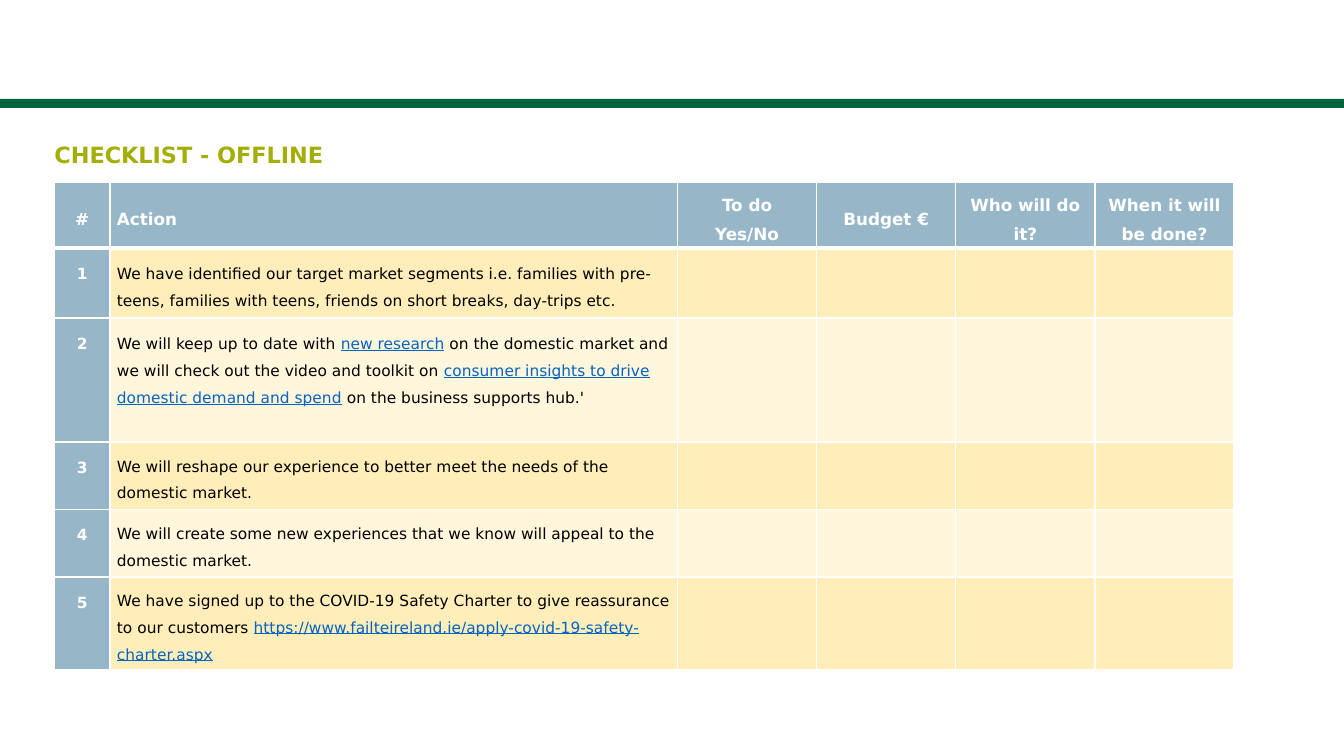
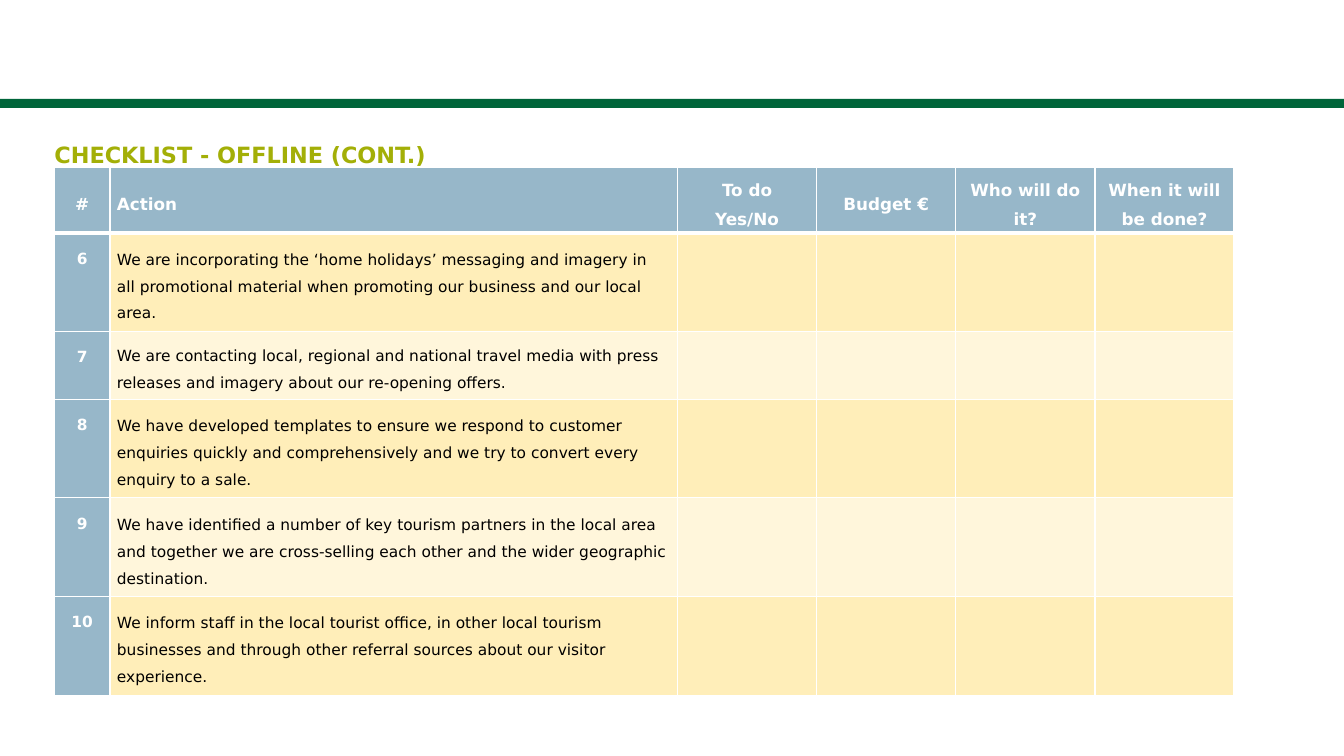
from dataclasses import dataclass

from lxml.etree import SubElement
from pptx import Presentation
from pptx.dml.color import RGBColor
from pptx.enum.shapes import MSO_SHAPE
from pptx.enum.text import MSO_ANCHOR, PP_ALIGN
from pptx.oxml.ns import qn
from pptx.util import Inches, Pt

FONT = "DejaVu Sans"
WHITE, BLACK = "FFFFFF", "000000"
GREEN, LIME = "00653A", "A3AF07"
BLUE, CREAM, LINK = "317195", "FFEEB9", "0563C1"

LEFT = 0.54
COLUMN_WIDTHS = [0.55, 5.63] + [1.38] * 4
HEADER_HEIGHT = 0.65
HEADINGS = ["#", "Action", "To do\nYes/No", "Budget €", "Who will do it?", "When it will be done?"]

TITLE_STYLE = {"size": Pt(16), "bold": True}
HEADING_STYLE = {"size": Pt(12), "bold": True}
NUMBER_STYLE = {"size": Pt(11), "bold": True}
ACTION_STYLE = {"size": Pt(11), "bold": False}
LINK_STYLE = {**ACTION_STYLE, "underline": True}


@dataclass
class Span:
    text: str
    color: str
    style: dict


@dataclass
class Action:
    height: float
    spans: list[Span]
    anchor: MSO_ANCHOR = MSO_ANCHOR.MIDDLE
    padding: float = 0


@dataclass
class Checklist:
    title: str
    top: float
    first_number: int
    actions: list[Action]


def plain(text: str) -> Span:
    return Span(text, BLACK, ACTION_STYLE)


def link(text: str) -> Span:
    return Span(text, LINK, LINK_STYLE)


CHECKLISTS = [
    Checklist("CHECKLIST - OFFLINE", 1.81, 1, [
        Action(0.67, [plain(
            "We have identified our target market segments i.e. families with pre-teens, "
            "families with teens, friends on short breaks, day-trips etc.")], padding=0.08),
        Action(1.23, [
            plain("We will keep up to date with "),
            link("new research"),
            plain(" on the domestic market and we will check out the video and toolkit on "),
            link("consumer insights to drive domestic demand and spend"),
            plain(" on the business supports hub.'"),
        ], MSO_ANCHOR.TOP, 0.08),
        Action(0.67, [plain(
            "We will reshape our experience to better meet the needs of the domestic market.")]),
        Action(0.67, [plain(
            "We will create some new experiences that we know will appeal to the domestic market.")]),
        Action(0.92, [
            plain("We have signed up to the COVID-19 Safety Charter to give reassurance "
                  "to our customers "),
            link("https://www.failteireland.ie/apply-covid-19-safety-charter.aspx"),
        ]),
    ]),
    Checklist("CHECKLIST - OFFLINE (CONT.)", 1.66, 6, [
        Action(0.98, [plain(
            "We are incorporating the ‘home holidays’ messaging and imagery in all "
            "promotional material when promoting our business and our local area.")]),
        Action(0.67, [plain(
            "We are contacting local, regional and national travel media with press releases "
            "and imagery about our re-opening offers.")]),
        Action(0.98, [plain(
            "We have developed templates to ensure we respond to customer enquiries quickly and "
            "comprehensively and we try to convert every enquiry to a sale.")]),
        Action(0.98, [plain(
            "We have identified a number of key tourism partners in the local area and together "
            "we are cross-selling each other and the wider geographic destination.")]),
        Action(0.98, [plain(
            "We inform staff in the local tourist office, in other local tourism businesses and "
            "through other referral sources about our visitor experience.")]),
    ]),
]


def rgb(color: str) -> RGBColor:
    return RGBColor.from_string(color)


def write(frame, spans: list[Span], line_spacing: float, align=PP_ALIGN.LEFT) -> None:
    frame.word_wrap = True
    para = frame.paragraphs[0]
    para.alignment = align
    para.line_spacing = line_spacing
    for span in spans:
        for index, line in enumerate(span.text.split("\n")):
            if index:
                para.add_line_break()
            run = para.add_run()
            run.text = line
            run.font.name = FONT
            run.font.color.rgb = rgb(span.color)
            for name, value in span.style.items():
                setattr(run.font, name, value)


def paint_cell(cell, color: str, opacity: int, top: int = 1, bottom: int = 1) -> None:
    properties = cell._tc.get_or_add_tcPr()
    for side, width in {"L": 1, "R": 1, "T": top, "B": bottom}.items():
        border = SubElement(properties, qn(f"a:ln{side}"), w=str(Pt(width)))
        fill = SubElement(border, qn("a:solidFill"))
        SubElement(fill, qn("a:srgbClr"), val=WHITE)
    cell.fill.solid()
    cell.fill.fore_color.rgb = rgb(color)
    if opacity < 100:
        shade = properties.find(qn("a:solidFill"))[0]
        SubElement(shade, qn("a:alpha"), val=str(opacity * 1000))


def fill_cell(cell, spans: list[Span], align, anchor, padding: float) -> None:
    margins = {"left": 0.07, "top": padding, "right": 0.07, "bottom": padding}
    for side, value in margins.items():
        setattr(cell, f"margin_{side}", Inches(value))
    cell.vertical_anchor = anchor
    write(cell.text_frame, spans, 1.5, align)


def add_band(page, width: int) -> None:
    band = page.shapes.add_shape(MSO_SHAPE.RECTANGLE, 0, Inches(0.98), width, Inches(0.09))
    band.shadow.inherit = False
    band.fill.solid()
    band.fill.fore_color.rgb = rgb(GREEN)
    band.line.fill.background()


def add_title(page, title: str) -> None:
    box = page.shapes.add_textbox(Inches(LEFT), Inches(1.38), Inches(10.05), Inches(0.58))
    for side in ("left", "top", "right", "bottom"):
        setattr(box.text_frame, f"margin_{side}", 0)
    write(box.text_frame, [Span(title, LIME, TITLE_STYLE)], 1.07)


def add_checklist(page, checklist: Checklist) -> None:
    heights = [HEADER_HEIGHT] + [action.height for action in checklist.actions]
    table = page.shapes.add_table(
        len(heights), len(COLUMN_WIDTHS), Inches(LEFT), Inches(checklist.top),
        Inches(sum(COLUMN_WIDTHS)), Inches(sum(heights))).table
    table.first_row = table.horz_banding = False
    for column, width in zip(table.columns, COLUMN_WIDTHS):
        column.width = Inches(width)
    for row, height in zip(table.rows, heights):
        row.height = Inches(height)

    for index, heading in enumerate(HEADINGS):
        cell = table.cell(0, index)
        align = PP_ALIGN.LEFT if heading == "Action" else PP_ALIGN.CENTER
        paint_cell(cell, BLUE, 50, bottom=3)
        fill_cell(cell, [Span(heading, WHITE, HEADING_STYLE)], align, MSO_ANCHOR.MIDDLE, 0)

    for row, action in enumerate(checklist.actions, 1):
        top = 3 if row == 1 else 1
        for column in range(len(HEADINGS)):
            color, opacity = (CREAM, 100 if row % 2 else 50) if column else (BLUE, 50)
            paint_cell(table.cell(row, column), color, opacity, top=top)
        number = Span(str(checklist.first_number + row - 1), WHITE, NUMBER_STYLE)
        fill_cell(table.cell(row, 0), [number], PP_ALIGN.CENTER, MSO_ANCHOR.TOP, 0.08)
        fill_cell(table.cell(row, 1), action.spans, PP_ALIGN.LEFT, action.anchor, action.padding)


def main() -> None:
    deck = Presentation()
    deck.slide_width = Inches(13.33)
    deck.slide_height = Inches(7.5)
    for checklist in CHECKLISTS:
        page = deck.slides.add_slide(deck.slide_layouts[6])
        add_band(page, deck.slide_width)
        add_checklist(page, checklist)
        add_title(page, checklist.title)
    deck.save("out.pptx")


if __name__ == "__main__":
    main()
